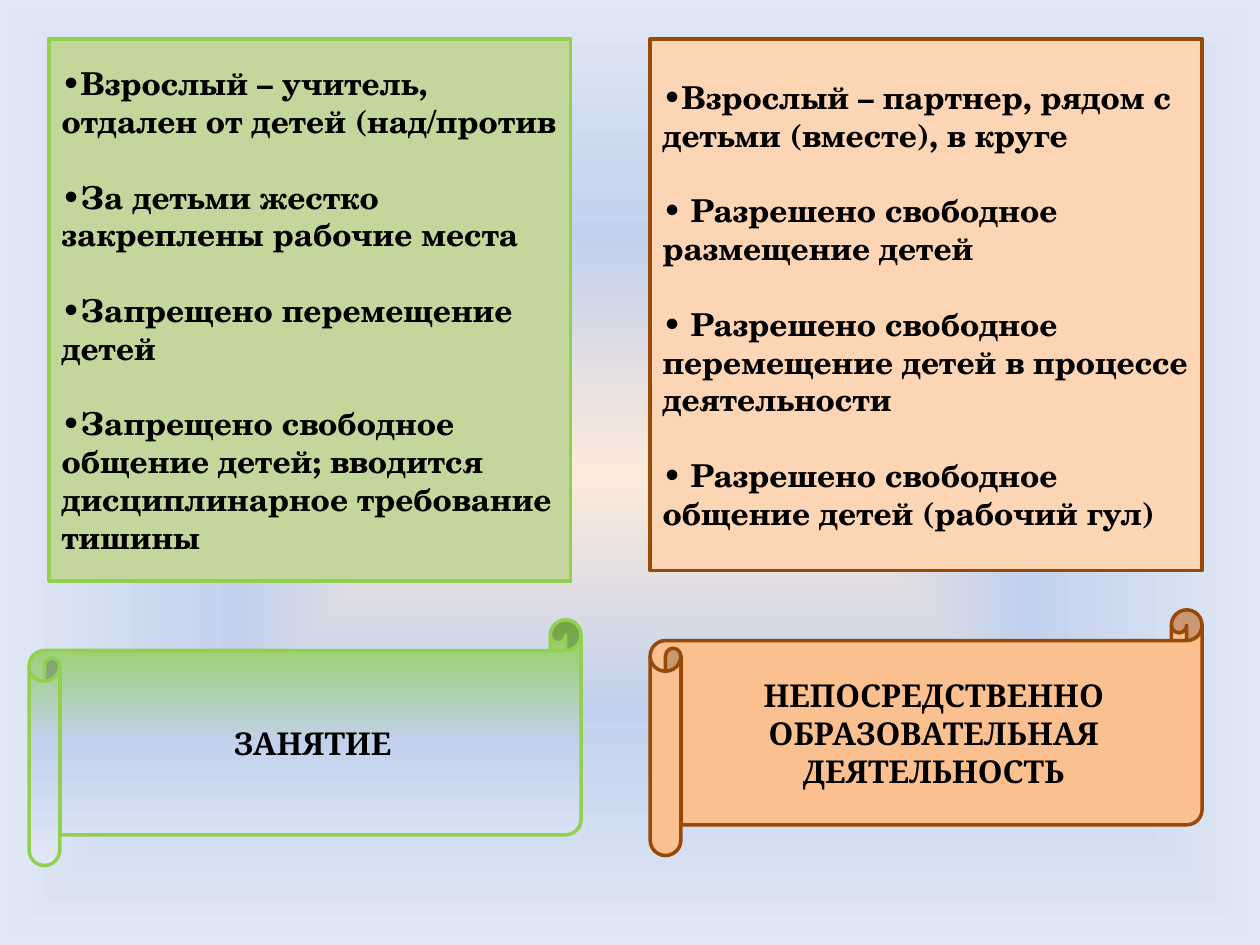
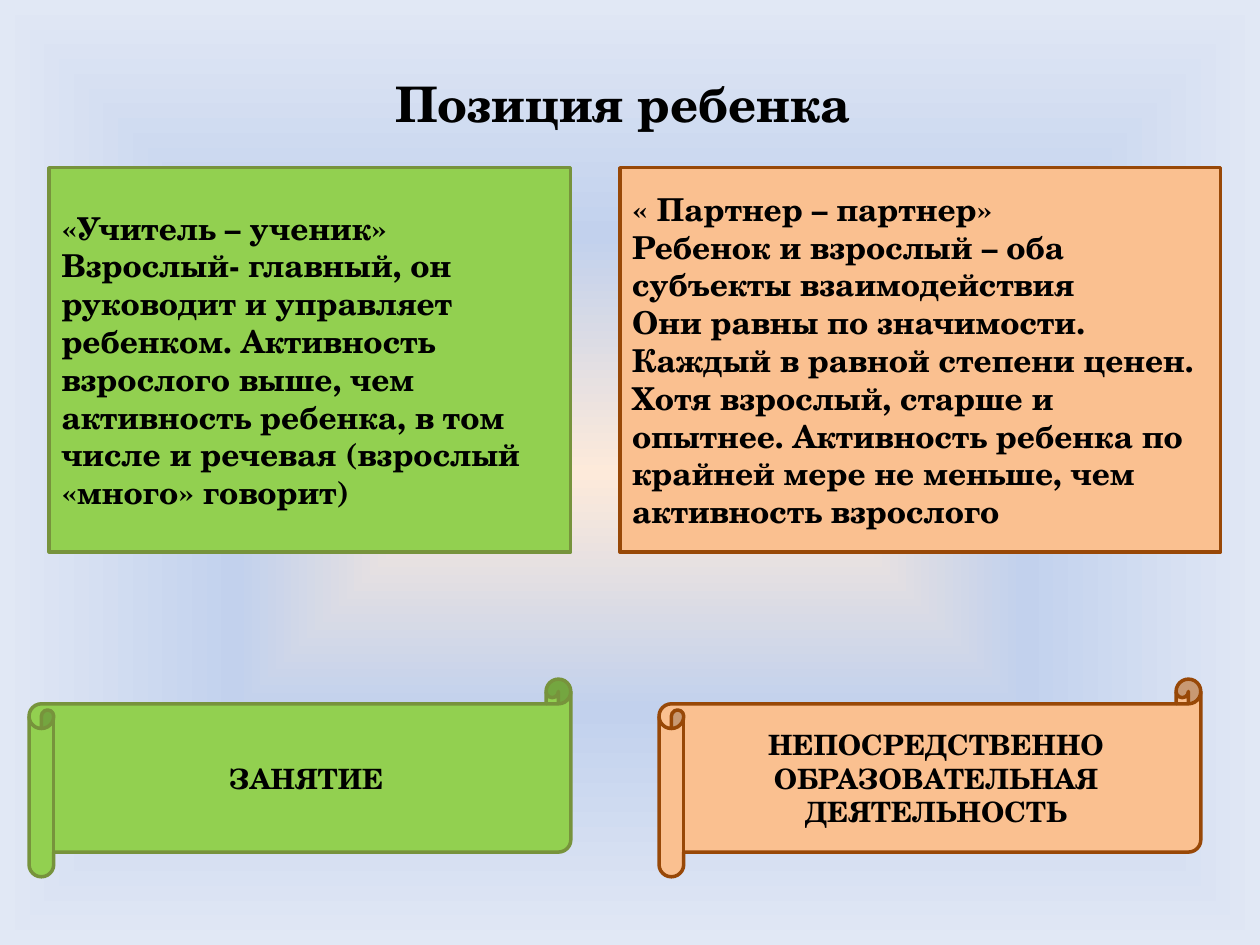
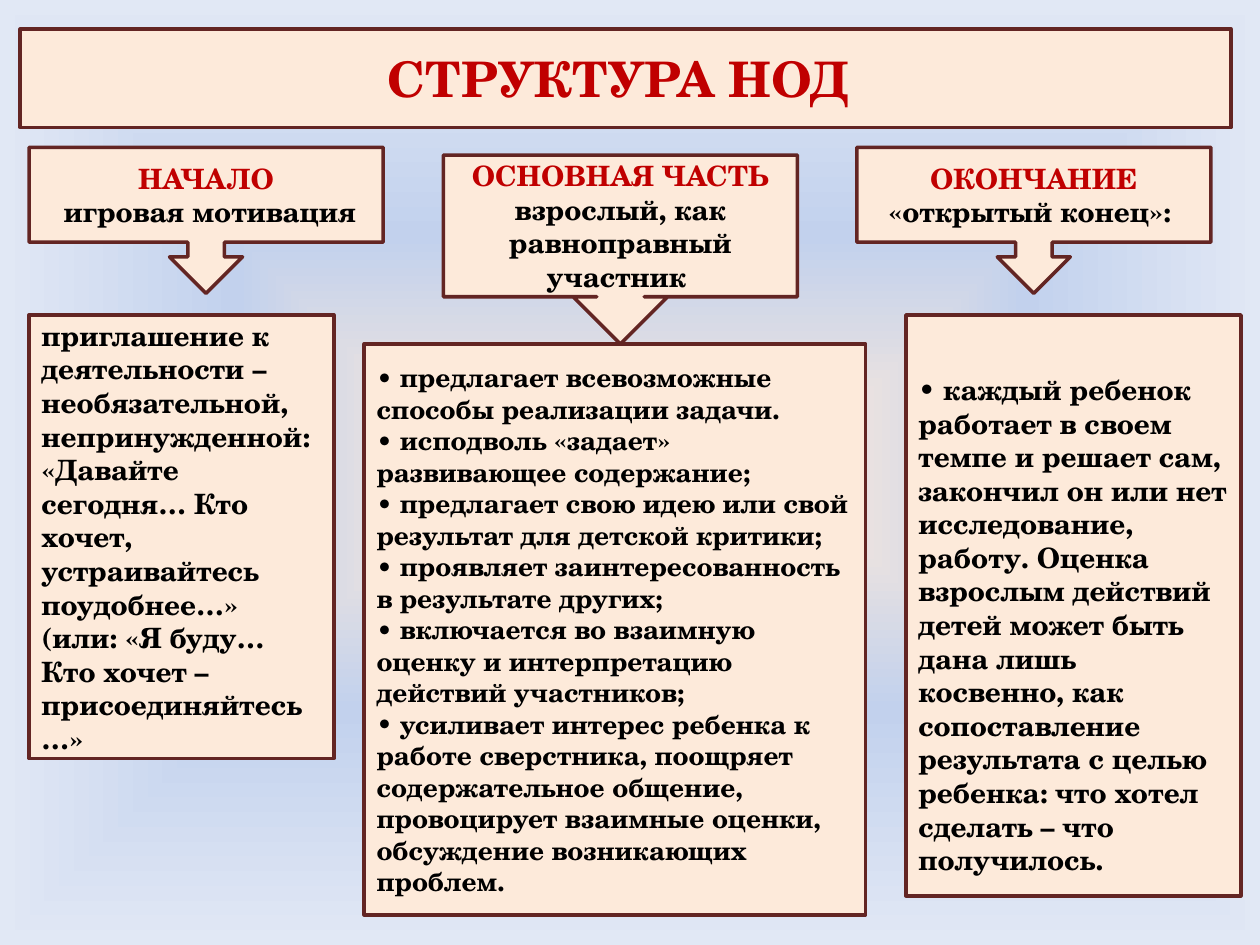
from dataclasses import dataclass

import pptx
import pptx.dml.color
import pptx.enum.shapes
import pptx.enum.text
import pptx.oxml
import pptx.util

Pt = pptx.util.Pt
SHAPE = pptx.enum.shapes.MSO_SHAPE
ALIGN = pptx.enum.text.PP_ALIGN


@dataclass(frozen=True)
class Theme:
    font: str = "TeX Gyre Schola"
    scroll_font: str = "Cambria"
    ink: str = "000000"
    red: str = "C00000"
    maroon: str = "632523"
    cream: str = "FDEADA"
    sage: str = "C3D69B"
    green: str = "92D050"
    olive: str = "77933C"
    peach: str = "FCD5B5"
    orange: str = "FAC090"
    brown: str = "984807"
    mid_blue: str = "C2D1ED"
    pale_blue: str = "E1E8F5"
    title: int = 28
    body: int = 18
    label: int = 16
    dense: int = 15
    line: int = 2
    bullet_gap: float = 21.6


T = Theme()
LESSON = "ЗАНЯТИЕ"
ACTIVITY = "НЕПОСРЕДСТВЕННО ОБРАЗОВАТЕЛЬНАЯ ДЕЯТЕЛЬНОСТЬ"


def rgb(value):
    return pptx.dml.color.RGBColor.from_string(value)


def set_gradient(fill, element, first, direction):
    """Fade from the first colour through the two blues; direction is the closing XML."""
    fill.gradient()
    stops = "".join(
        f'<a:gs pos="{pos}"><a:srgbClr val="{color}"/></a:gs>'
        for pos, color in ((0, first), (50000, T.mid_blue), (100000, T.pale_blue)))
    grad = element.xpath(".//a:gradFill")[0]
    ns = 'xmlns:a="http://schemas.openxmlformats.org/drawingml/2006/main"'
    grad.getparent().replace(grad, pptx.oxml.parse_xml(
        f'<a:gradFill {ns} rotWithShape="1"><a:gsLst>{stops}</a:gsLst>{direction}</a:gradFill>'))


def set_background(prs):
    master = prs.slide_master
    set_gradient(master.background.fill, master.element, T.cream,
                 '<a:path path="shape"><a:fillToRect l="50000" t="50000" '
                 'r="50000" b="50000"/></a:path>')


def add_bullet(p):
    pPr = p._p.get_or_add_pPr()
    for tag, name, value in (("buFont", "typeface", T.font), ("buChar", "char", "•")):
        pPr.append(pptx.oxml.parse_xml(
            '<a:%s xmlns:a="http://schemas.openxmlformats.org/drawingml/2006/main" %s="%s"/>'
            % (tag, name, value)))


def write(sp, lines, size, align=ALIGN.LEFT, colors=(T.ink,), font=T.font,
          bullets=False, gap=0):
    """Fill a shape with paragraphs; the last colour serves all further lines."""
    tf = sp.text_frame
    tf.word_wrap = True
    tf.vertical_anchor = pptx.enum.text.MSO_ANCHOR.MIDDLE
    for i, line in enumerate(lines):
        p = tf.add_paragraph() if i else tf.paragraphs[0]
        p.text = line
        p.alignment = align
        if i and gap:
            p.space_before = Pt(gap)
        if bullets:
            add_bullet(p)
        f = p.runs[0].font
        f.name, f.size, f.bold = font, Pt(size), True
        f.color.rgb = rgb(colors[min(i, len(colors) - 1)])


def add_box(s, box, fill, line, kind=SHAPE.RECTANGLE):
    sp = s.shapes.add_shape(kind, *map(Pt, box))
    sp.shadow.inherit = False
    sp.fill.solid()
    sp.fill.fore_color.rgb = rgb(fill)
    sp.line.color.rgb = rgb(line)
    sp.line.width = Pt(T.line)
    return sp


def add_column(s, box, panel, fill, line, lines, **style):
    """Panel at the top of the box; panel gives its indent, width and height."""
    left, top, _, _ = box
    dx, width, height = panel
    sp = add_box(s, (left + dx, top, width, height), fill, line)
    write(sp, lines, T.body, **style)


def add_scroll(s, box, height, fill, line, label, size, font=T.font):
    """Scroll with a caption along the bottom of the box."""
    left, top, width, full = box
    sp = add_box(s, (left, top + full - height, width, height), fill, line,
                 SHAPE.HORIZONTAL_SCROLL)
    write(sp, [label], size, ALIGN.CENTER, font=font)
    return sp


def add_stage(s, box, head_height, heading, body, lines, size, bullets=False, top_gap=0):
    """Arrow callout at the top, text at the bottom; body gives indent, width, height."""
    left, top, width, full = box
    head = add_box(s, (left, top, width, head_height), T.cream, T.maroon,
                   SHAPE.DOWN_ARROW_CALLOUT)
    write(head, heading, T.label, ALIGN.CENTER, (T.red, T.ink))
    dx, body_width, height = body
    sp = add_box(s, (left + dx, top + full - height, body_width, height), T.cream, T.maroon)
    sp.text_frame.margin_top = Pt(3.6 + top_gap)
    write(sp, lines, size, bullets=bullets)
    return head


def new_slide(prs):
    return prs.slides.add_slide(prs.slide_layouts[6])


def adult_slide(prs):
    s = new_slide(prs)
    left, right = (16.6, 22.3, 315.4, 472.3), (371.5, 22.3, 315.4, 466.6)
    style = {"bullets": True, "gap": T.bullet_gap}
    add_column(s, left, (11.5, 298.1, 309.6), T.sage, T.green, [
        "Взрослый – учитель, отдален от детей (над/против",
        "За детьми жестко закреплены рабочие места",
        "Запрещено перемещение детей",
        "Запрещено свободное общение детей; вводится дисциплинарное требование тишины",
    ], **style)
    add_column(s, right, (0, 315.4, 303.8), T.peach, T.brown, [
        "Взрослый – партнер, рядом с детьми (вместе), в круге",
        " Разрешено свободное размещение детей",
        " Разрешено свободное перемещение детей в процессе деятельности",
        " Разрешено свободное общение детей (рабочий гул)",
    ], **style)
    lesson = add_scroll(s, left, 140.4, T.green, T.green, LESSON, T.body, T.scroll_font)
    set_gradient(lesson.fill, lesson.element, T.green, '<a:lin ang="5400000" scaled="0"/>')
    add_scroll(s, right, 140.4, T.orange, T.brown, ACTIVITY, T.body, T.scroll_font)


def child_slide(prs):
    s = new_slide(prs)
    title = s.shapes.add_textbox(Pt(36), Pt(21.6), Pt(648), Pt(74.2))
    write(title, ["Позиция ребенка "], T.title, ALIGN.CENTER)
    left, right = ((x, 95.8, 309.6, 405.3) for x in (16.6, 376.6))
    add_column(s, left, (11.5, 298.1, 219.6), T.green, T.olive, [
        "«Учитель – ученик»",
        "Взрослый- главный, он руководит и управляет ребенком. Активность взрослого "
        "выше, чем активность ребенка, в том числе и речевая (взрослый «много» говорит)",
    ])
    add_column(s, right, (-22.4, 343.4, 219.6), T.orange, T.brown, [
        "« Партнер – партнер»",
        "Ребенок и взрослый – оба субъекты взаимодействия",
        "Они равны по значимости. Каждый в равной степени ценен. Хотя взрослый, старше "
        "и опытнее. Активность ребенка по крайней мере не меньше, чем активность взрослого",
    ])
    add_scroll(s, left, 113, T.green, T.olive, LESSON, T.label)
    add_scroll(s, right, 113, T.orange, T.brown, ACTIVITY, T.label)


def structure_slide(prs):
    s = new_slide(prs)
    banner = add_box(s, (11.5, 16.6, 691.9, 56.2), T.cream, T.maroon)
    write(banner, ["СТРУКТУРА НОД "], T.title, ALIGN.CENTER, (T.red,))
    add_stage(s, (16.6, 84.2, 202.3, 349.2), 83.5, ["НАЧАЛО", " игровая мотивация"],
              (0, 174.2, 253.4), [
        "приглашение к деятельности – необязательной, непринужденной: «Давайте сегодня… "
        "Кто хочет, устраивайтесь поудобнее…» (или: «Я буду… Кто хочет – присоединяйтесь…»",
    ], T.label)
    main_head = add_stage(
        s, (253.4, 88.6, 202.3, 434.2), 108,
        ["ОСНОВНАЯ ЧАСТЬ", "взрослый, как равноправный участник "],
        (-45.3, 286.6, 326.2), [
            " предлагает всевозможные способы реализации задачи.",
            " исподволь «задает» развивающее содержание;",
            " предлагает свою идею или свой результат для детской критики;",
            " проявляет заинтересованность в результате других;",
            " включается во взаимную оценку и интерпретацию действий участников;",
            " усиливает интерес ребенка к работе сверстника, поощряет содержательное "
            "общение, провоцирует взаимные оценки, обсуждение возникающих проблем.",
        ], T.dense, bullets=True)
    main_head.adjustments[3] = 0.75
    add_stage(s, (489.6, 84.2, 202.3, 427.7), 83.5, ["ОКОНЧАНИЕ", "«открытый конец»: "],
              (28.1, 191.5, 331.9), [
        " каждый ребенок работает в своем темпе и решает сам, закончил он или нет "
        "исследование, работу. Оценка взрослым действий детей может быть дана лишь "
        "косвенно, как сопоставление результата с целью ребенка: что хотел сделать – "
        "что получилось.",
    ], T.label, bullets=True, top_gap=T.bullet_gap)


def main():
    prs = pptx.Presentation()
    prs.slide_width, prs.slide_height = Pt(720), Pt(540)
    set_background(prs)
    adult_slide(prs)
    child_slide(prs)
    structure_slide(prs)
    prs.save("out.pptx")


if __name__ == "__main__":
    main()
